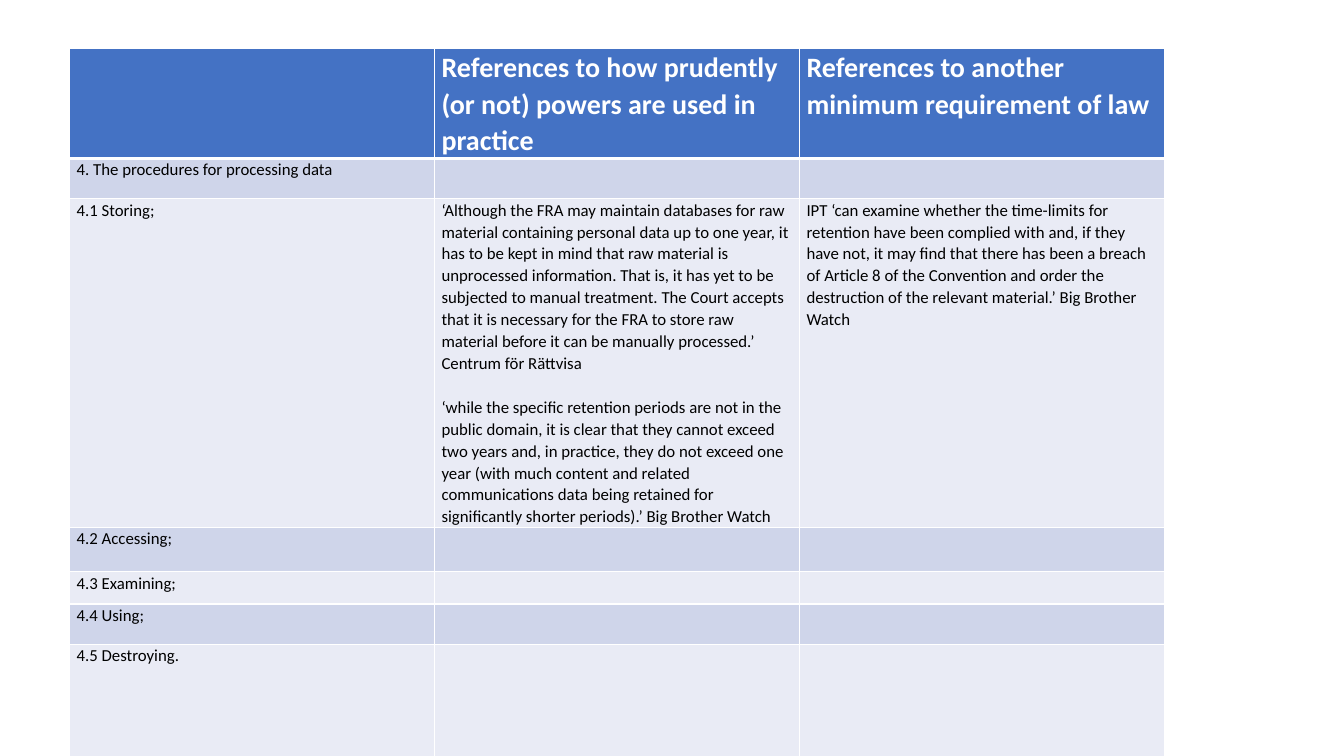
"""Build a slide with a table of references on procedures for processing data."""
from lxml import etree
from pptx import Presentation
from pptx.dml.color import RGBColor
from pptx.oxml.ns import qn
from pptx.util import Inches, Pt

ROWS = [
    (1.08, ["",
            "References to how prudently (or not) powers are used in practice",
            "References to another minimum requirement of law"]),
    (0.4, ["4. The procedures for processing data", "", ""]),
    (3.26, ["4.1 Storing;",
            "‘Although the FRA may maintain databases for raw material containing "
            "personal data up to one year, it has to be kept in mind that raw material "
            "is unprocessed information. That is, it has yet to be subjected to manual "
            "treatment. The Court accepts that it is necessary for the FRA to store raw "
            "material before it can be manually processed.’ Centrum för Rättvisa\n"
            "‘while the specific retention periods are not in the public domain, it is "
            "clear that they cannot exceed two years and, in practice, they do not exceed "
            "one year (with much content and related communications data being retained "
            "for significantly shorter periods).’ Big Brother Watch",
            "IPT ‘can examine whether the time-limits for retention have been complied "
            "with and, if they have not, it may find that there has been a breach of "
            "Article 8 of the Convention and order the destruction of the relevant "
            "material.’ Big Brother Watch"]),
    (0.44, ["4.2 Accessing;", "", ""]),
    (0.32, ["4.3 Examining;", "", ""]),
    (0.4, ["4.4 Using;", "", ""]),
    (1.12, ["4.5 Destroying.", "", ""]),
]
LEFT, TOP, COL_WIDTH = 0.69, 0.48, 3.62
FONT = "Calibri"
WHITE = RGBColor(0xFF, 0xFF, 0xFF)
BLACK = RGBColor(0, 0, 0)
HEADER = RGBColor(0x44, 0x72, 0xC4)
BANDS = [RGBColor(0xE9, 0xEB, 0xF5), RGBColor(0xCF, 0xD5, 0xEA)]


def add_borders(cell, row):
    """Draw white cell borders, thick between the header and the body."""
    widths = {"L": 1, "R": 1, "T": 3 if row == 1 else 1, "B": 3 if row == 0 else 1}
    tcPr = cell._tc.get_or_add_tcPr()
    for side, width in widths.items():
        ln = etree.SubElement(tcPr, qn(f"a:ln{side}"), w=str(Pt(width)))
        fill = etree.SubElement(ln, qn("a:solidFill"))
        etree.SubElement(fill, qn("a:srgbClr"), val=str(WHITE))


def fill_cell(cell, row, text):
    """Set the text, borders and fill of one cell."""
    add_borders(cell, row)
    cell.fill.solid()
    cell.fill.fore_color.rgb = BANDS[row % 2] if row else HEADER
    cell.margin_left = cell.margin_right = Inches(0.07)
    cell.margin_top = cell.margin_bottom = 0
    cell.text_frame.text = text
    for i, p in enumerate(cell.text_frame.paragraphs):
        p.line_spacing = 1.07
        if i:
            p.space_before = Pt(15.7)
        for r in p.runs:
            r.font.name = FONT
            r.font.size = Pt(12 if row else 20)
            r.font.bold = row == 0
            r.font.color.rgb = BLACK if row else WHITE


def main():
    """Create the presentation and save it."""
    prs = Presentation()
    prs.slide_width, prs.slide_height = Inches(13.33), Inches(7.5)
    s = prs.slides.add_slide(prs.slide_layouts[6])
    cols = len(ROWS[0][1])
    height = sum(h for h, _ in ROWS)
    table = s.shapes.add_table(len(ROWS), cols, Inches(LEFT), Inches(TOP),
                               Inches(cols * COL_WIDTH), Inches(height)).table
    for col in table.columns:
        col.width = Inches(COL_WIDTH)
    for row, (row_height, texts) in enumerate(ROWS):
        table.rows[row].height = Inches(row_height)
        for col, text in enumerate(texts):
            fill_cell(table.cell(row, col), row, text)
    prs.save("out.pptx")


if __name__ == "__main__":
    main()
